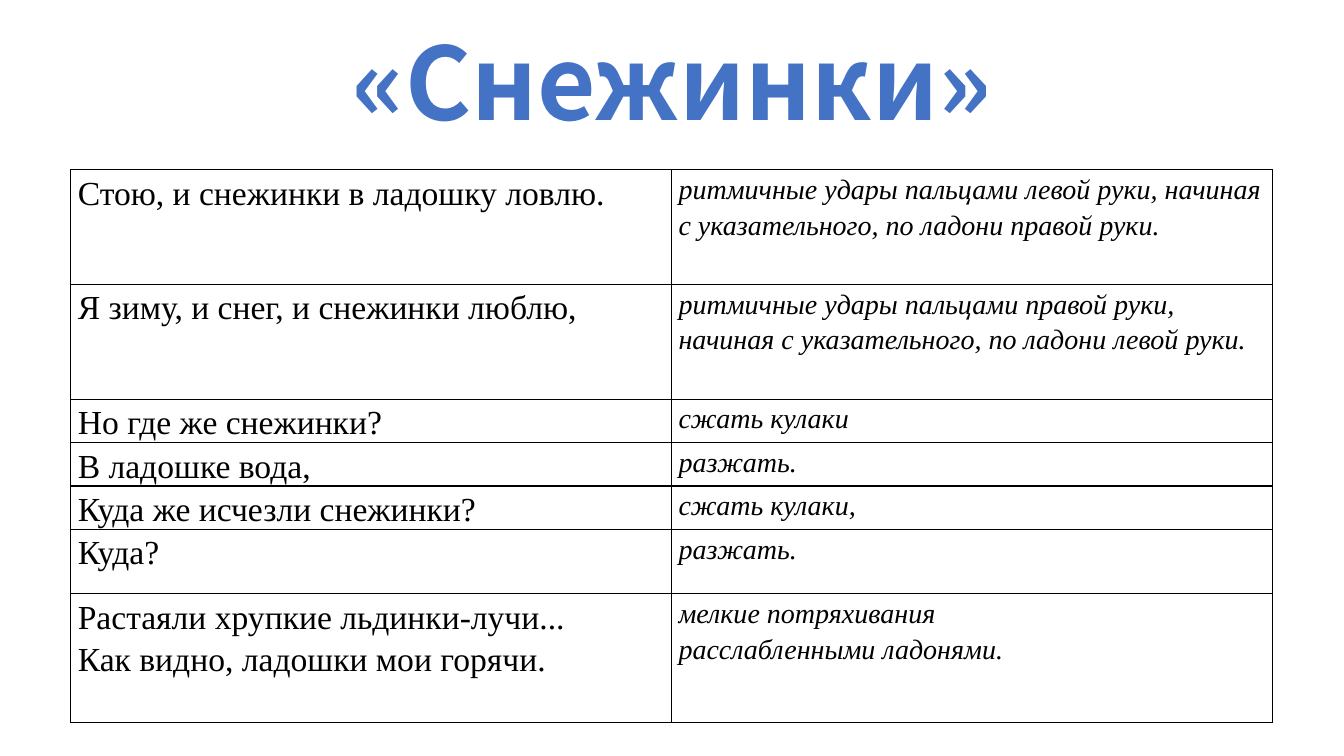
from dataclasses import dataclass

import pptx
import pptx.dml.color
import pptx.enum.text
import pptx.oxml
import pptx.oxml.ns
import pptx.util

Pt = pptx.util.Pt


@dataclass(frozen=True)
class Theme:
    title_font: str = "Noto Sans CJK KR"
    body_font: str = "Times New Roman"
    title_size: int = 72
    verse_size: int = 24
    movement_size: int = 20
    title_color: str = "4472C4"
    ink: str = "000000"
    border_width: int = 1


THEME = Theme()

ROWS = [
    (82, ["Стою, и снежинки в ладошку ловлю."],
     ["ритмичные удары пальцами левой руки, начиная с указательного, по ладони правой руки."]),
    (82, ["Я зиму, и снег, и снежинки люблю,"],
     ["ритмичные удары пальцами правой руки, начиная с указательного, по ладони левой руки."]),
    (31, ["Но где же снежинки?"], ["сжать кулаки"]),
    (31, ["В ладошке вода,"], ["разжать."]),
    (31, ["Куда же исчезли снежинки?"], ["сжать кулаки,"]),
    (46, ["Куда?"], ["разжать."]),
    (92, ["Растаяли хрупкие льдинки-лучи...", "Как видно, ладошки мои горячи."],
     ["мелкие потряхивания\nрасслабленными ладонями."]),
]


def add_span(para, text, font, size, color, bold=False, italic=False):
    span = para.add_run()
    span.text = text
    span.font.name = font
    span.font.size = Pt(size)
    span.font.bold = bold
    span.font.italic = italic
    span.font.color.rgb = pptx.dml.color.RGBColor.from_string(color)


def set_title(page, text):
    box = page.shapes.title
    box.left, box.top, box.width, box.height = Pt(66), Pt(29), Pt(828), Pt(104.4)
    frame = box.text_frame
    frame.word_wrap = True
    frame.auto_size = pptx.enum.text.MSO_AUTO_SIZE.NONE
    frame.vertical_anchor = pptx.enum.text.MSO_ANCHOR.MIDDLE
    frame.margin_bottom = Pt(58)
    para = frame.paragraphs[0]
    para.alignment = pptx.enum.text.PP_ALIGN.CENTER
    para.line_spacing = 1.07
    add_span(para, text, THEME.title_font, THEME.title_size, THEME.title_color, bold=True)


def set_borders(cell):
    properties = cell._tc.get_or_add_tcPr()
    for position, side in enumerate("LRTB"):
        border = pptx.oxml.parse_xml(
            f'<a:ln{side} {pptx.oxml.ns.nsdecls("a")} w="{Pt(THEME.border_width)}">'
            f'<a:solidFill><a:srgbClr val="{THEME.ink}"/></a:solidFill></a:ln{side}>'
        )
        properties.insert(position, border)


def fill_cell(cell, paragraphs, size, italic):
    cell.fill.background()
    set_borders(cell)
    cell.margin_left = cell.margin_right = Pt(5)
    cell.margin_top = cell.margin_bottom = Pt(0)
    frame = cell.text_frame
    for index, text in enumerate(paragraphs):
        para = frame.add_paragraph() if index else frame.paragraphs[0]
        para.line_spacing = 1.15
        for number, line in enumerate(text.split("\n")):
            if number:
                para.add_line_break()
            add_span(para, line, THEME.body_font, size, THEME.ink, italic=italic)


def add_verse_table(page):
    height = sum(row[0] for row in ROWS)
    frame = page.shapes.add_table(len(ROWS), 2, Pt(50.6), Pt(121.2), Pt(858.2), Pt(height))
    table = frame.table
    table.first_row = False
    table.horz_banding = False
    for column in table.columns:
        column.width = Pt(429.1)
    for index, (row_height, verse, movement) in enumerate(ROWS):
        table.rows[index].height = Pt(row_height)
        fill_cell(table.cell(index, 0), verse, THEME.verse_size, False)
        fill_cell(table.cell(index, 1), movement, THEME.movement_size, True)


def main():
    deck = pptx.Presentation()
    deck.slide_width, deck.slide_height = Pt(960), Pt(540)
    page = deck.slides.add_slide(deck.slide_layouts[5])
    set_title(page, "«Снежинки»")
    add_verse_table(page)
    deck.save("out.pptx")


if __name__ == "__main__":
    main()
